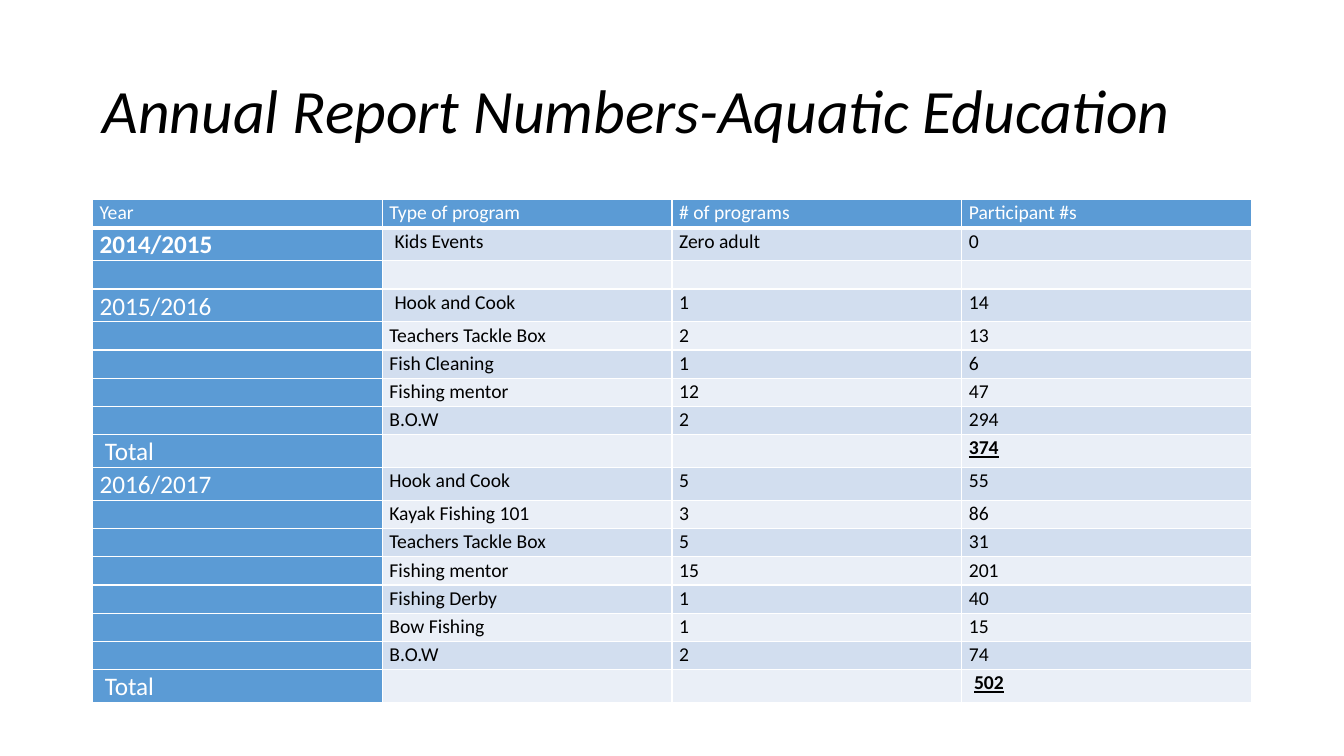
from lxml import etree
from pptx import Presentation
from pptx import util as u
from pptx.dml.color import RGBColor
from pptx.enum import text
from pptx.oxml import ns

WHITE = RGBColor(0xFF, 0xFF, 0xFF)
BLACK = RGBColor(0x00, 0x00, 0x00)
BLUE = RGBColor(0x5B, 0x9B, 0xD5)
BAND_DARK = RGBColor(0xD2, 0xDE, 0xEF)
BAND_LIGHT = RGBColor(0xEA, 0xEF, 0xF7)

HEADINGS = ["Year", "Type of program", "# of programs", "Participant #s"]
PROGRAMS = [
    ["2014/2015", " Kids Events", "Zero adult", "0"],
    ["", "", "", ""],
    ["2015/2016", " Hook and Cook", "1", "14"],
    ["", "Teachers Tackle Box", "2", "13"],
    ["", "Fish Cleaning", "1", "6"],
    ["", "Fishing mentor", "12", "47"],
    ["", "B.O.W", "2", "294"],
    [" Total", "", "", "374"],
    ["2016/2017", "Hook and Cook", "5", "55"],
    ["", "Kayak Fishing 101", "3", "86"],
    ["", "Teachers Tackle Box", "5", "31"],
    ["", "Fishing mentor", "15", "201"],
    ["", "Fishing Derby", "1", "40"],
    ["", "Bow Fishing", "1", "15"],
    ["", "B.O.W", "2", "74"],
    [" Total", "", "", " 502"],
]


class ReportSlide:
    """Holds the report's style and the slide being built."""

    font = "Calibri"
    left = u.Cm(2.33)
    width = u.Cm(29.21)
    margin = u.Cm(0.18)
    indent = u.Cm(0.13)
    row_height = u.Cm(0.71)
    body_size = 14
    year_size = 18

    def __init__(self, presentation):
        """Add a title-only slide."""
        self.slide = presentation.slides.add_slide(presentation.slide_layouts[5])

    def format_run(self, run, size, color, bold=False, italic=False, underline=False):
        """Apply the font and its variations to a run."""
        run.font.name = self.font
        run.font.size = u.Pt(size)
        run.font.color.rgb = color
        run.font.bold = bold
        run.font.italic = italic
        run.font.underline = underline

    def title(self, words):
        """Place and format the title."""
        title = self.slide.shapes.title
        title.left, title.top = self.left, u.Cm(1.01)
        title.width, title.height = self.width, u.Cm(3.68)
        frame = title.text_frame
        frame.text = words
        frame.word_wrap = True
        frame.vertical_anchor = text.MSO_ANCHOR.MIDDLE
        paragraph = frame.paragraphs[0]
        paragraph.alignment = text.PP_ALIGN.LEFT
        paragraph.line_spacing = 0.9
        self.format_run(paragraph.runs[0], 44, BLACK, italic=True)

    def borders(self, cell, bottom=1):
        """Draw white lines on the four sides of a cell."""
        properties = cell._tc.get_or_add_tcPr()
        for side, points in (("L", 1), ("R", 1), ("T", 1), ("B", bottom)):
            line = etree.SubElement(properties, ns.qn(f"a:ln{side}"), w=str(u.Pt(points)))
            fill = etree.SubElement(line, ns.qn("a:solidFill"))
            etree.SubElement(fill, ns.qn("a:srgbClr"), val=str(WHITE))

    def cell(self, cell, words, fill, color, size, strong=False, underline=False, bottom=1):
        """Fill one cell, indenting words that start with a space."""
        self.borders(cell, bottom)
        cell.fill.solid()
        cell.fill.fore_color.rgb = fill
        cell.margin_left = self.margin + (self.indent if words.startswith(" ") else 0)
        cell.margin_right = self.margin
        cell.margin_top = cell.margin_bottom = 0
        cell.text_frame.text = words.strip()
        paragraph = cell.text_frame.paragraphs[0]
        paragraph.line_spacing = 1.07
        for run in paragraph.runs:
            self.format_run(run, size, color, bold=strong, underline=underline)
        if not words:
            etree.SubElement(paragraph._p, ns.qn("a:endParaRPr"), sz=str(self.body_size * 100))

    def table(self, headings, rows):
        """Add the table with a blue header row and year column."""
        count = len(rows) + 1
        frame = self.slide.shapes.add_table(
            count, len(headings), self.left, u.Cm(5.03), self.width, self.row_height * count)
        table = frame.table
        for row in table.rows:
            row.height = self.row_height
        for column, heading in enumerate(headings):
            self.cell(table.cell(0, column), heading, BLUE, WHITE, self.body_size, bottom=3)
        for index, (year, *details) in enumerate(rows, start=1):
            self.cell(table.cell(index, 0), year, BLUE, WHITE, self.year_size, strong=index == 1)
            band = BAND_DARK if index % 2 else BAND_LIGHT
            total = year.strip() == "Total"
            for column, detail in enumerate(details, start=1):
                self.cell(table.cell(index, column), detail, band, BLACK, self.body_size,
                          strong=total, underline=total)


def main():
    """Build and save the presentation."""
    presentation = Presentation()
    presentation.slide_width = u.Cm(33.87)
    presentation.slide_height = u.Cm(19.05)
    report = ReportSlide(presentation)
    report.title("Annual Report Numbers-Aquatic Education")
    report.table(HEADINGS, PROGRAMS)
    presentation.save("out.pptx")


if __name__ == "__main__":
    main()
